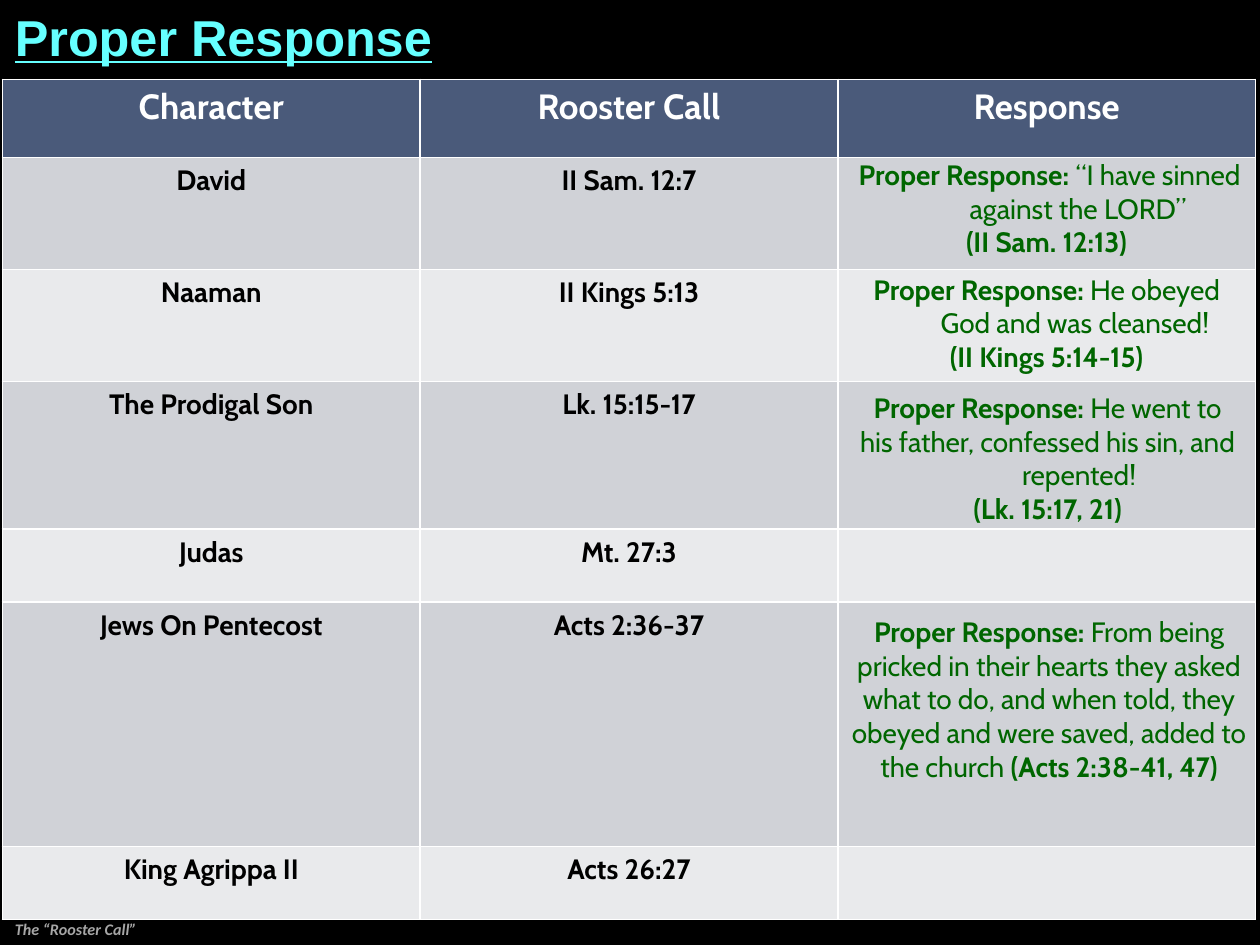
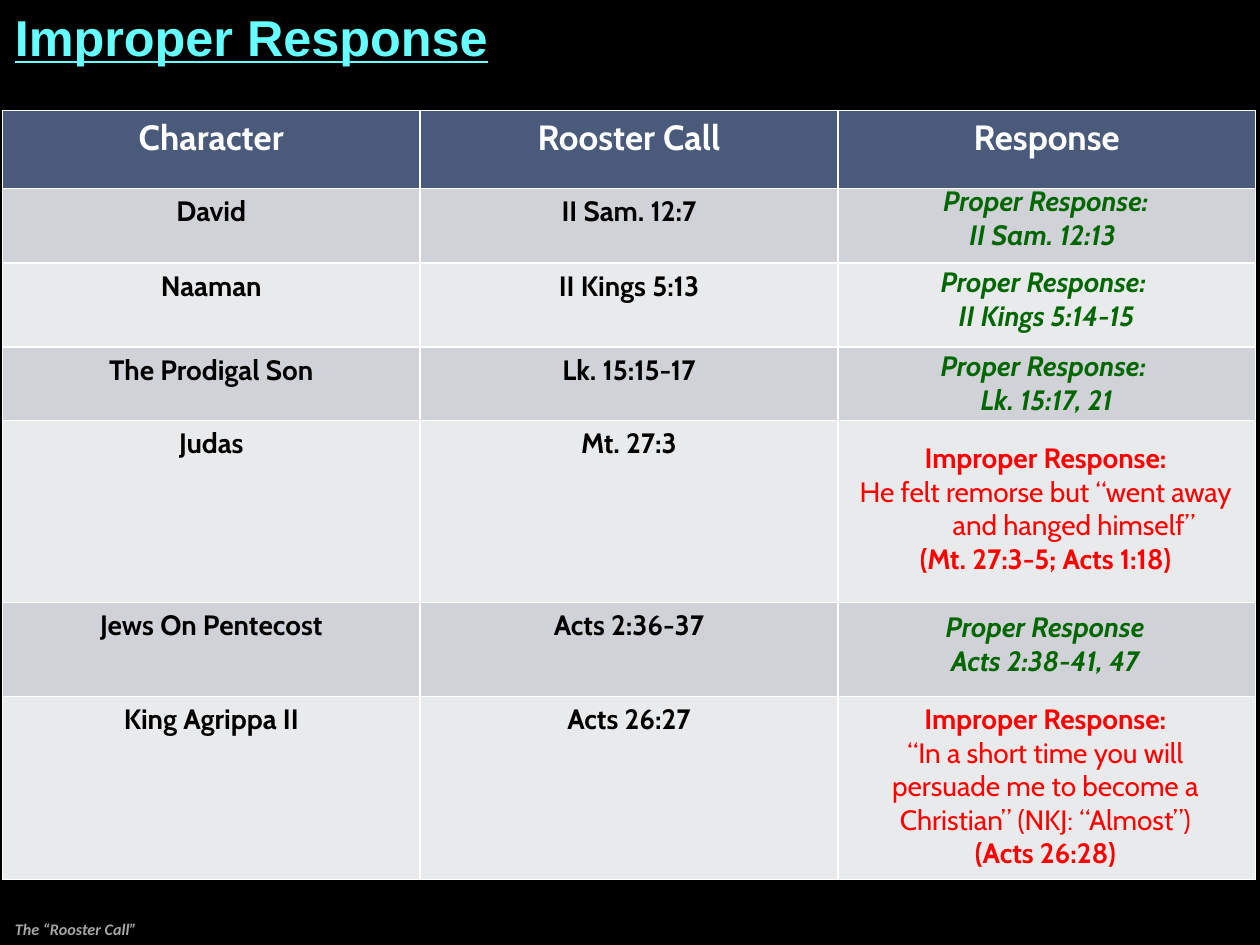
from dataclasses import dataclass

from pptx import Presentation
from pptx.dml.color import RGBColor as RGB
from pptx.enum.text import MSO_ANCHOR as ANCHOR, MSO_AUTO_SIZE as AUTO, PP_ALIGN as ALIGN
from pptx.util import Cm, Pt


@dataclass(frozen=True)
class Theme:
    background: str = "000000"
    title: str = "66FFFF"
    footer: str = "A6A6A6"
    header_fill: str = "4A5A7A"
    header_text: str = "FFFFFF"
    bands: tuple = ("D0D2D7", "E9EAEC")
    body_text: str = "000000"
    proper: str = "006600"
    improper: str = "FF0000"
    title_font: str = "Arial"
    table_font: str = "Cabin"
    footer_font: str = "Calibri"
    title_size: float = 28.8
    header_size: float = 20
    body_size: float = 16
    footer_size: float = 9.2


THEME = Theme()
FOOTER = "The “Rooster Call”"
HEADERS = ("Character", "Rooster Call", "Response")
CALLS = (
    ("David", "II Sam. 12:7"),
    ("Naaman", "II Kings 5:13"),
    ("The Prodigal Son", "Lk. 15:15-17"),
    ("Judas", "Mt. 27:3"),
    ("Jews On Pentecost", "Acts 2:36-37"),
    ("King Agrippa II", "Acts 26:27"),
)
TABLE_LEFT, COLUMN_WIDTH = 0.05, 8.42
LINE_HEIGHT, BOX_PADDING = 0.69, 0.25


# Text helpers
def add_run(p, text, font, size, color, bold=True, italic=False, underline=False):
    r = p.add_run()
    r.text = text
    f = r.font
    f.name, f.size, f.color.rgb = font, Pt(size), RGB.from_string(color)
    f.bold, f.italic, f.underline = bold, italic, underline


def add_text_frame(s, left, top, width, height, anchor=ANCHOR.TOP):
    sp = s.shapes.add_textbox(Cm(left), Cm(top), Cm(width), Cm(height))
    tf = sp.text_frame
    tf.word_wrap = True
    tf.vertical_anchor = anchor
    return tf


def hang(p):
    pPr = p._p.get_or_add_pPr()
    pPr.set("marL", str(Cm(1.27)))
    pPr.set("indent", str(-Cm(1.27)))


# Title, footer and background shared by the slides
def add_base_slide(prs, title):
    s = prs.slides.add_slide(prs.slide_layouts[6])
    s.background.fill.solid()
    s.background.fill.fore_color.rgb = RGB.from_string(THEME.background)

    p = add_text_frame(s, 0.05, 18.42, 9.32, 0.61, ANCHOR.MIDDLE).paragraphs[0]
    add_run(p, FOOTER, THEME.footer_font, THEME.footer_size, THEME.footer, italic=True)

    p = add_text_frame(s, 0.05, -0.03, 25.4, 1.5, ANCHOR.BOTTOM).paragraphs[0]
    p.space_before = Pt(4)
    add_run(p, title, THEME.title_font, THEME.title_size, THEME.title, underline=True)
    return s


# Table of characters and their calls
def fill_cell(cell, text, fill, size, color):
    cell.fill.solid()
    cell.fill.fore_color.rgb = RGB.from_string(fill)
    if text:
        p = cell.text_frame.paragraphs[0]
        p.alignment = ALIGN.CENTER
        add_run(p, text, THEME.table_font, size, color)


def add_call_table(s, top, row_heights):
    table = s.shapes.add_table(
        len(row_heights), len(HEADERS), Cm(TABLE_LEFT), Cm(top),
        Cm(COLUMN_WIDTH * len(HEADERS)), Cm(sum(row_heights))).table
    for column in table.columns:
        column.width = Cm(COLUMN_WIDTH)
    for row, height in zip(table.rows, row_heights):
        row.height = Cm(height)
    for c, text in enumerate(HEADERS):
        fill_cell(table.cell(0, c), text, THEME.header_fill,
                  THEME.header_size, THEME.header_text)
    for r, call in enumerate(CALLS, 1):
        for c, text in enumerate((*call, "")):
            fill_cell(table.cell(r, c), text, THEME.bands[(r - 1) % 2],
                      THEME.body_size, THEME.body_text)


# Response laid over a table cell; each paragraph is a list of (text, bold)
def add_response(s, left, top, width, lines, paragraphs, color=THEME.proper,
                 italic=False, hanging=True):
    tf = add_text_frame(s, left, top, width, LINE_HEIGHT * lines + BOX_PADDING)
    tf.auto_size = AUTO.SHAPE_TO_FIT_TEXT
    for i, runs in enumerate(paragraphs):
        p = tf.add_paragraph() if i else tf.paragraphs[0]
        p.alignment = ALIGN.CENTER
        if hanging:
            hang(p)
        for text, bold in runs:
            add_run(p, text, THEME.table_font, THEME.body_size, color, bold, italic)


def add_reference(s, left, top, width, label, verse, hanging=True):
    add_response(s, left, top, width, 2, [[(label, True)], [(verse, True)]],
                 italic=True, hanging=hanging)


def build_proper(prs):
    s = add_base_slide(prs, "Proper Response")
    add_call_table(s, 1.6, (1.57, 2.26, 2.26, 2.98, 1.47, 4.93, 1.47))
    label = ("Proper Response: ", True)
    add_response(s, 16.97, 3.05, 8.38, 3, [
        [label, ("“I have sinned against the LORD” ", False)],
        [("(II Sam. 12:13) ", True)]])
    add_response(s, 16.87, 5.36, 8.46, 3, [
        [label, ("He obeyed God and was cleansed! ", False)],
        [("(II Kings 5:14-15)", True)]])
    add_response(s, 16.89, 7.75, 8.46, 4, [
        [label, ("He went to", False)],
        [("his father, confessed his sin, and repented!", False)],
        [("(Lk. 15:17, 21)", True)]])
    add_response(s, 16.92, 12.27, 8.46, 6, [
        [label, ("From being pricked in their hearts they asked what to do, and when "
                 "told, they obeyed and were saved, added to the church ", False),
         ("(Acts 2:38-41, 47)", True)]], hanging=False)


def build_improper(prs):
    s = add_base_slide(prs, "Improper Response")
    add_call_table(s, 2.23, (1.57, 1.5, 1.7, 1.48, 3.67, 1.89, 3.69))
    add_reference(s, 16.87, 3.58, 8.43, "Proper Response:", "II Sam. 12:13 ")
    add_reference(s, 16.87, 5.21, 8.46, "Proper Response: ", "II Kings 5:14-15")
    add_reference(s, 16.87, 6.91, 8.46, "Proper Response: ", "Lk. 15:17, 21")
    add_reference(s, 16.84, 12.17, 8.46, "Proper Response", "Acts 2:38-41, 47",
                  hanging=False)
    label = ("Improper Response:", True)
    add_response(s, 16.84, 8.76, 8.48, 4, [
        [label],
        [("He felt remorse but “went away and hanged himself” ", False)],
        [("(Mt. 27:3-5; Acts 1:18)", True)]], THEME.improper)
    add_response(s, 16.87, 14.02, 8.41, 5, [
        [label],
        [("“In a short time you will", False)],
        [("persuade me to become a", False)],
        [("Christian” (NKJ: “Almost”)", False)],
        [("(Acts 26:28)", True)]], THEME.improper)


def main():
    prs = Presentation()
    prs.slide_width, prs.slide_height = Cm(25.4), Cm(19.05)
    build_proper(prs)
    build_improper(prs)
    prs.save("out.pptx")


if __name__ == "__main__":
    main()
